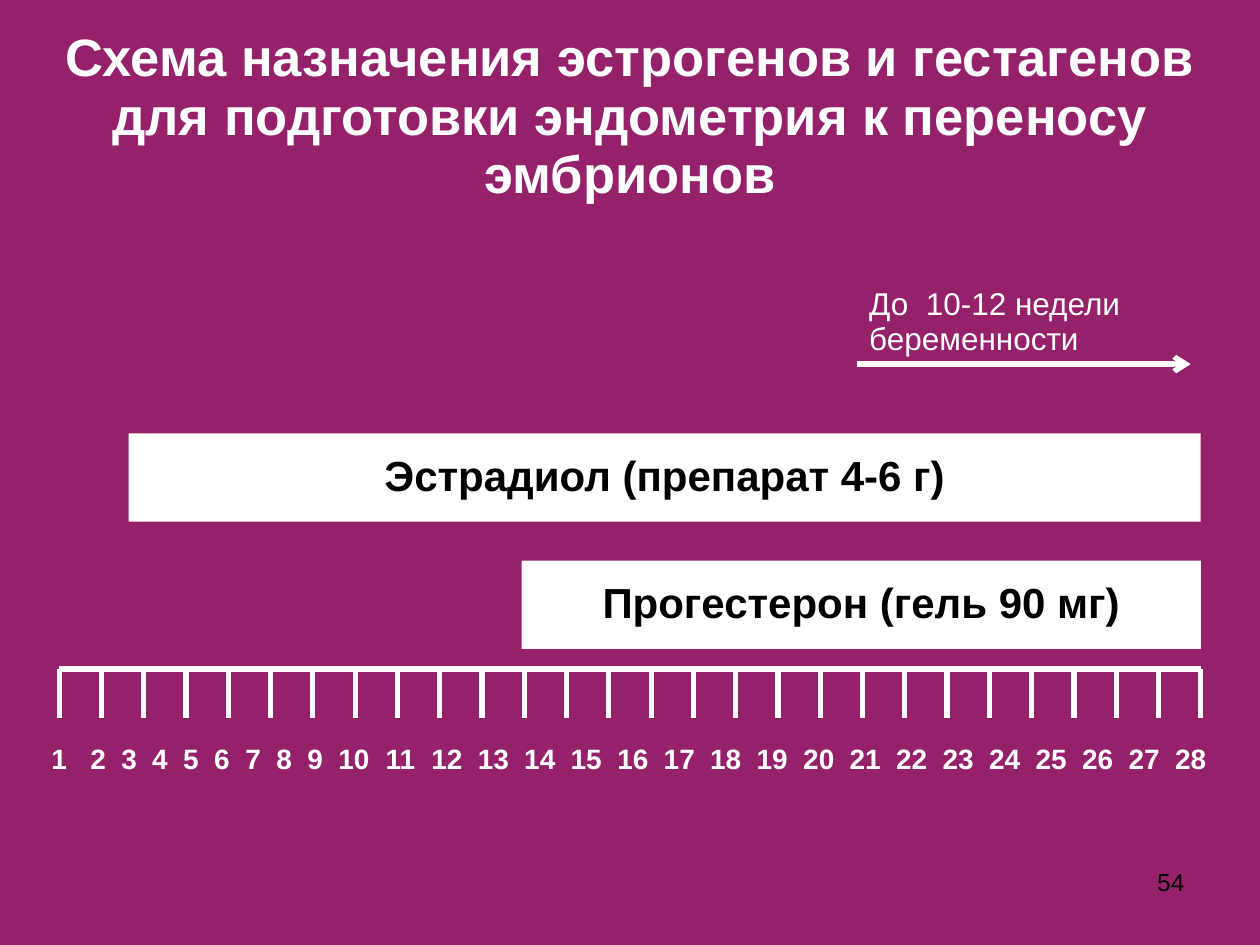
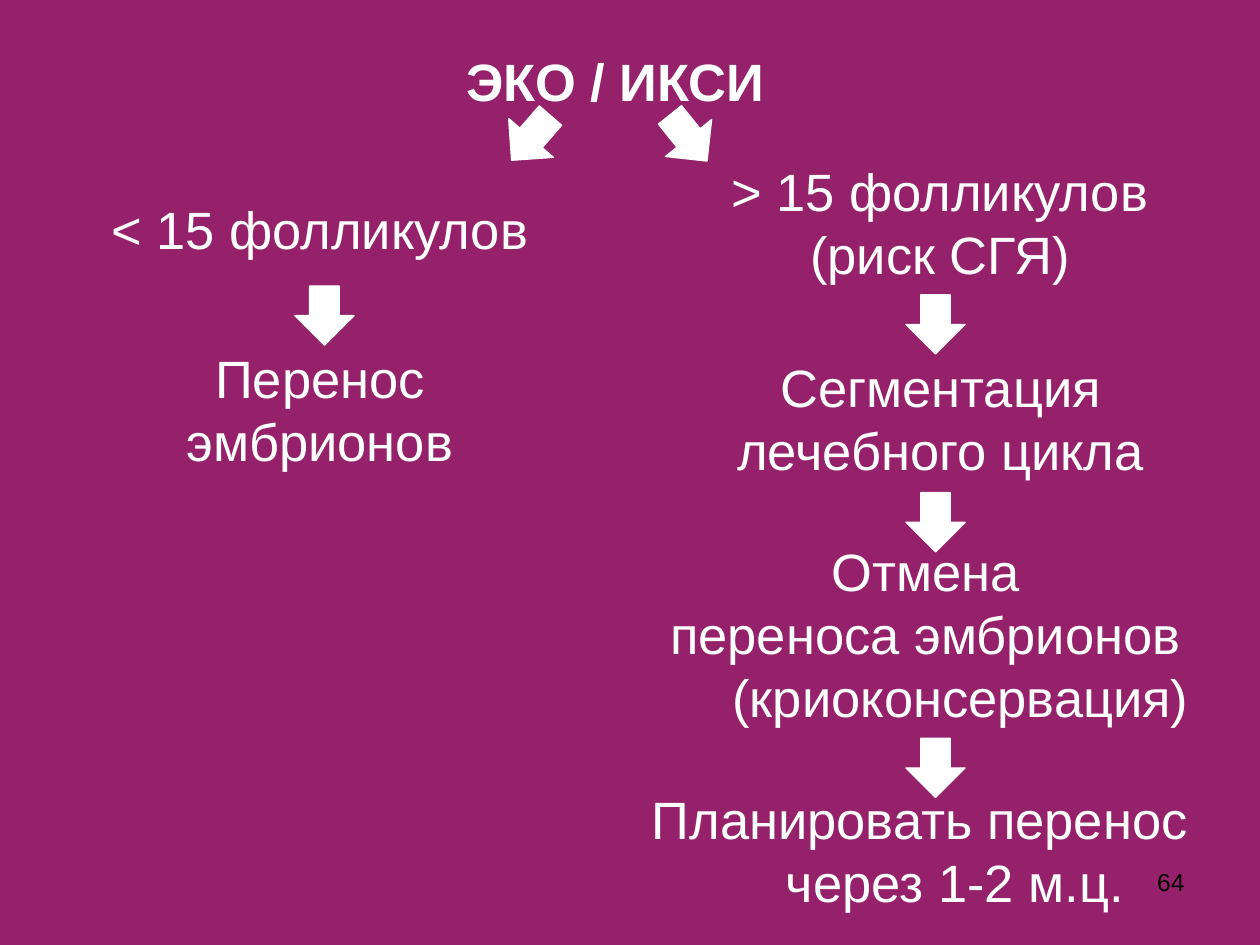
from dataclasses import dataclass

from lxml import etree
from pptx import Presentation
from pptx.dml.color import RGBColor
from pptx.enum.shapes import MSO_CONNECTOR, MSO_SHAPE as Preset
from pptx.enum.text import MSO_ANCHOR as Anchor, MSO_AUTO_SIZE, PP_ALIGN as Align
from pptx.oxml.ns import qn
from pptx.util import Inches, Pt


@dataclass(frozen=True)
class Theme:
    font: str = "Arial"
    background: RGBColor = RGBColor(0x96, 0x21, 0x6B)
    light: RGBColor = RGBColor(0xFF, 0xFF, 0xFF)
    dark: RGBColor = RGBColor(0x00, 0x00, 0x00)
    heading: int = 30
    bar: int = 24
    note: int = 18
    scale: int = 16
    number: int = 14
    hanging: float = 0.56


theme = Theme()


def write(shape, text, size, color=theme.light, bold=False, align=Align.CENTER,
          anchor=Anchor.MIDDLE, spacing=None, after=None, hanging=0):
    """Fill a shape with text, one paragraph per line, in one style."""
    frame = shape.text_frame
    frame.text = text
    frame.word_wrap = True
    frame.auto_size = MSO_AUTO_SIZE.NONE
    frame.vertical_anchor = anchor
    frame.margin_left = frame.margin_right = Inches(0.1)
    frame.margin_top = frame.margin_bottom = Inches(0.05)
    for paragraph in frame.paragraphs:
        paragraph.alignment = align
        if spacing:
            paragraph.line_spacing = spacing
        if after:
            paragraph.space_after = Pt(after)
        if hanging:
            properties = paragraph._p.get_or_add_pPr()
            properties.set("marL", str(Inches(hanging)))
            properties.set("indent", str(-Inches(hanging)))
        font = paragraph.font
        font.name, font.size, font.bold = theme.font, Pt(size), bold
        font.color.rgb = color


def draw_line(shapes, x1, y1, x2, y2):
    line = shapes.add_connector(MSO_CONNECTOR.STRAIGHT, Inches(x1), Inches(y1),
                                Inches(x2), Inches(y2))
    line.line.color.rgb = theme.light
    line.line.width = Pt(3)
    etree.SubElement(line._element.spPr, qn("a:effectLst"))
    return line


presentation = Presentation()
presentation.slide_width, presentation.slide_height = Inches(10), Inches(7.5)
master_fill = presentation.slide_master.background.fill
master_fill.solid()
master_fill.fore_color.rgb = theme.background

# Titles and slide numbers
headings = [
    ("Схема назначения эстрогенов и гестагенов для подготовки эндометрия "
     "к переносу эмбрионов", "54", (0, 0, 10, 1.87), dict(spacing=0.93)),
    ("ЭКО / ИКСИ", "64", (2.27, 0, 5.23, 1.18),
     dict(spacing=1.2, after=12, hanging=theme.hanging)),
]
slides = []
for heading, number, (left, top, width, height), style in headings:
    slide = presentation.slides.add_slide(presentation.slide_layouts[5])
    title = slide.shapes.title
    title.left, title.top = Inches(left), Inches(top)
    title.width, title.height = Inches(width), Inches(height)
    write(title, heading, theme.heading, bold=True, **style)
    number_box = slide.shapes.add_textbox(Inches(7.17), Inches(6.83), Inches(2.33), Inches(0.52))
    write(number_box, number, theme.number, theme.dark, align=Align.RIGHT, anchor=Anchor.TOP)
    slides.append(slide)
schedule, treatment = slides

# Schedule: scale of cycle days
days = 28
scale_left, scale_right, scale_top, scale_bottom = 0.47, 9.53, 5.31, 5.7
scale = schedule.shapes.add_group_shape()
draw_line(scale.shapes, scale_left, scale_top, scale_right, scale_top)
for day in range(days):
    x = scale_left + day * (scale_right - scale_left) / (days - 1)
    draw_line(scale.shapes, x, scale_top, x, scale_bottom)

labels_left = 0.31
labels = schedule.shapes.add_textbox(Inches(labels_left), Inches(5.78), Inches(9.53), Inches(0.42))
write(labels, "\t".join(str(day) for day in range(1, days + 1)), theme.scale, bold=True,
      align=Align.LEFT, anchor=Anchor.TOP, spacing=1.2, after=12)
tab_list = etree.Element(qn("a:tabLst"))
for day in range(2, days + 1):
    center = 0.78 + 0.246 * (day - 2) if day < 10 else 2.81 + 0.369 * (day - 10)
    position = Inches(center - labels_left - 0.1)
    etree.SubElement(tab_list, qn("a:tab"), pos=str(position), algn="ctr")
label_properties = labels.text_frame.paragraphs[0]._p.get_or_add_pPr()
label_properties.find(qn("a:defRPr")).addprevious(tab_list)

# Schedule: drug bars, both ending with the scale
for drug, left, top in [("Прогестерон (гель 90 мг)", 4.14, 4.45),
                        ("Эстрадиол (препарат 4-6 г)", 1.02, 3.44)]:
    bar = schedule.shapes.add_shape(Preset.RECTANGLE, Inches(left), Inches(top),
                                    Inches(scale_right - left), Inches(0.7))
    bar.shadow.inherit = False
    bar.fill.solid()
    bar.fill.fore_color.rgb = theme.light
    bar.line.fill.background()
    write(bar, drug, theme.bar, theme.dark, bold=True, spacing=0.93)

# Schedule: continuation into pregnancy
continuation = draw_line(schedule.shapes, 6.8, 2.89, 9.45, 2.89)
etree.SubElement(continuation.line._get_or_add_ln(), qn("a:tailEnd"), type="arrow")
note = schedule.shapes.add_textbox(Inches(6.8), Inches(2.23), Inches(2.73), Inches(0.66))
write(note, "До  10-12 недели беременности", theme.note, align=Align.LEFT,
      anchor=Anchor.TOP, spacing=0.93)

# Treatment: steps of both branches
steps = [
    ("< 15 фолликулов", 0.78, 1.17, 3.52, dict(spacing=1.2, after=12)),
    ("Перенос\nэмбрионов", 0.78, 2.66, 3.52, {}),
    ("> 15 фолликулов\n(риск СГЯ)", 5.7, 1.17, 3.52, {}),
    ("Сегментация\nлечебного цикла", 5.59, 2.73, 3.75, {}),
    ("Отмена\nпереноса эмбрионов (криоконсервация)", 5.08, 4.44, 4.53, {}),
    ("Планировать перенос через 1-2 м.ц.", 4.84, 6.16, 4.92, {}),
]
for text, left, top, width, style in steps:
    step = treatment.shapes.add_textbox(Inches(left), Inches(top), Inches(width), Inches(1.18))
    write(step, text, theme.heading, hanging=theme.hanging, **style)

# Treatment: arrows between steps
for left, top, rotation in [(7.19, 2.34, 0), (7.19, 3.91, 0), (7.19, 5.86, 0),
                            (2.34, 2.27, 0), (5.23, 0.86, 321.3), (3.98, 0.86, 41)]:
    arrow = treatment.shapes.add_shape(Preset.DOWN_ARROW, Inches(left), Inches(top),
                                       Inches(0.47), Inches(0.47))
    arrow.rotation = rotation
    arrow.shadow.inherit = False
    arrow.fill.solid()
    arrow.fill.fore_color.rgb = theme.light
    arrow.line.color.rgb = theme.light
    arrow.line.width = Pt(0.75)

presentation.save("out.pptx")
